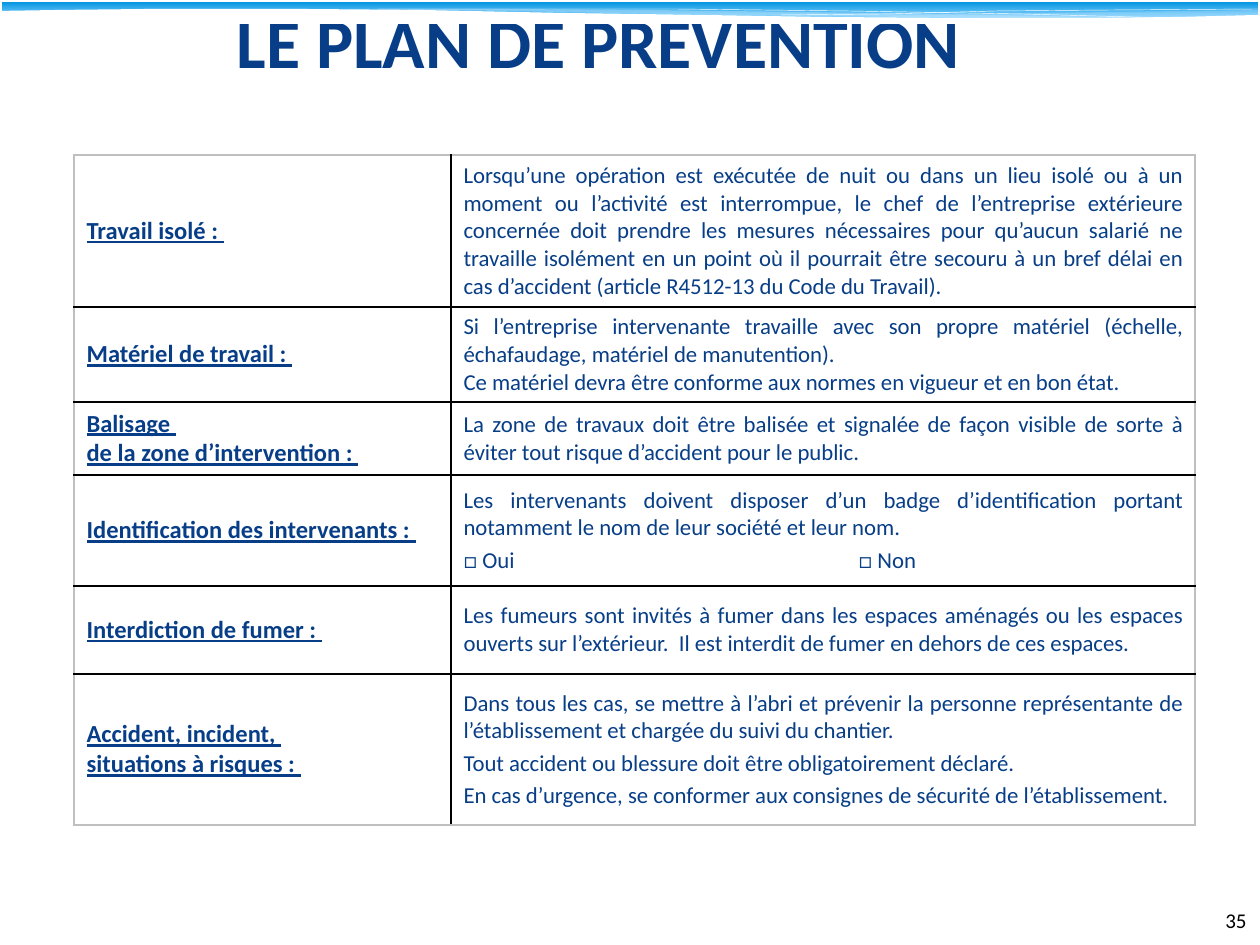
from dataclasses import dataclass

from lxml import etree
from pptx import Presentation
from pptx import util as u
from pptx.dml import color
from pptx.enum import shapes, text
from pptx.oxml import ns

PX = 914400 / 126


@dataclass(frozen=True)
class Theme:
    font: str = "Calibri"
    navy: str = "073E87"
    black: str = "000000"
    white: str = "FFFFFF"
    frame: str = "BFBFBF"
    band_top: str = "0293E0"
    band_bottom: str = "83D3FE"
    mist: str = "C6E7FC"
    title: int = 40
    label: int = 14
    body: int = 13
    number: int = 12
    gap: float = 2.6


def px(value):
    return u.Emu(round(value * PX))


def rgb(value):
    return color.RGBColor.from_string(value)


def child(parent, tag, **attributes):
    return etree.SubElement(parent, ns.qn(tag), attributes)


class SlideBuilder:
    def __init__(self, presentation, theme):
        self.theme = theme
        self.slide = presentation.slides.add_slide(presentation.slide_layouts[5])

    def set_text(self, paragraph, words, size, ink, align, bold=False, underline=False):
        paragraph.text = words
        paragraph.alignment = align
        font = paragraph.font
        font.name, font.size, font.bold = self.theme.font, u.Pt(size), bold
        font.underline = underline
        font.color.rgb = rgb(ink)

    def title(self, words, left, top, width, height):
        shape = self.slide.shapes.title
        shape.left, shape.top, shape.width, shape.height = map(px, (left, top, width, height))
        shape.text_frame.vertical_anchor = text.MSO_ANCHOR.MIDDLE
        shape.text_frame.auto_size = text.MSO_AUTO_SIZE.NONE
        self.set_text(shape.text_frame.paragraphs[0], words, self.theme.title,
                      self.theme.navy, text.PP_ALIGN.CENTER, bold=True)

    def page_number(self, words, left, top, width, height):
        shape = self.slide.shapes.add_textbox(*map(px, (left, top, width, height)))
        shape.text_frame.word_wrap = True
        shape.text_frame.vertical_anchor = text.MSO_ANCHOR.MIDDLE
        self.set_text(shape.text_frame.paragraphs[0], words, self.theme.number,
                      self.theme.black, text.PP_ALIGN.RIGHT)

    def band(self, left, top, width, height):
        shape = self.slide.shapes.add_shape(
            shapes.MSO_SHAPE.ROUNDED_RECTANGLE, *map(px, (left, top, width, height)))
        shape.adjustments[0] = 0.07
        shape.shadow.inherit = False
        shape.line.fill.background()
        shape.fill.gradient()
        shape.fill.gradient_angle = 270
        stops = shape.fill.gradient_stops
        for stop, place, ink in zip(stops, (0, 0.9), (self.theme.band_top, self.theme.band_bottom)):
            stop.position = place
            stop.color.rgb = rgb(ink)

    def wave(self, points, fill=None, opacity=100):
        builder = self.slide.shapes.build_freeform(*points[0], scale=PX)
        builder.add_line_segments(points[1:], close=fill is not None)
        shape = builder.convert_to_shape()
        shape.shadow.inherit = False
        if fill is None:
            shape.fill.background()
            shape.line.color.rgb = rgb(self.theme.white)
            shape.line.width = u.Pt(0.25)
            return
        shape.line.fill.background()
        shape.fill.solid()
        shape.fill.fore_color.rgb = rgb(fill)
        if opacity < 100:
            tint = shape.element.spPr.find(".//" + ns.qn("a:srgbClr"))
            child(tint, "a:alpha", val=str(opacity * 1000))

    def borders(self, cell, edges):
        properties = cell._tc.get_or_add_tcPr()
        for position, (side, ink) in enumerate(edges.items()):
            line = etree.Element(ns.qn("a:" + side), w=str(u.Pt(1)))
            child(child(line, "a:solidFill"), "a:srgbClr", val=ink)
            properties.insert(position, line)

    def fill_cell(self, cell, paragraphs, is_label, gap, tab):
        theme = self.theme
        cell.fill.background()
        cell.vertical_anchor = text.MSO_ANCHOR.MIDDLE
        frame = cell.text_frame
        for index, words in enumerate(paragraphs):
            paragraph = frame.add_paragraph() if index else frame.paragraphs[0]
            if index:
                paragraph.space_before = u.Pt(gap)
            has_tab = "\t" in words
            if has_tab:
                tabs = child(paragraph._p.get_or_add_pPr(), "a:tabLst")
                child(tabs, "a:tab", pos=str(px(tab)), algn="l")
            left = is_label or has_tab
            self.set_text(paragraph, words, theme.label if is_label else theme.body, theme.navy,
                          text.PP_ALIGN.LEFT if left else text.PP_ALIGN.JUSTIFY,
                          bold=is_label, underline=is_label)

    def table(self, rows, left, top, widths, heights, tab):
        table = self.slide.shapes.add_table(
            len(rows), len(widths), px(left), px(top), px(sum(widths)), px(sum(heights))).table
        table.first_row = table.horz_banding = False
        for column, width in zip(table.columns, widths):
            column.width = px(width)
        last_row, last_column = len(rows) - 1, len(widths) - 1
        frame, inner = self.theme.frame, self.theme.black
        for i, (label, gap, paragraphs) in enumerate(rows):
            table.rows[i].height = px(heights[i])
            for j, content in enumerate(([label], paragraphs)):
                cell = table.cell(i, j)
                self.fill_cell(cell, content, j == 0, gap, tab)
                self.borders(cell, {
                    "lnL": frame if j == 0 else inner,
                    "lnR": frame if j == last_column else inner,
                    "lnT": frame if i == 0 else inner,
                    "lnB": frame if i == last_row else inner,
                })


THEME = Theme()
ROWS = [
    ("Travail isolé : ", 0, [
        "Lorsqu’une opération est exécutée de nuit ou dans un lieu isolé ou à un moment ou "
        "l’activité est interrompue, le chef de l’entreprise extérieure concernée doit prendre "
        "les mesures nécessaires pour qu’aucun salarié ne travaille isolément en un point où il "
        "pourrait être secouru à un bref délai en cas d’accident (article R4512-13 du Code du "
        "Travail)."]),
    ("Matériel de travail : ", 0, [
        "Si l’entreprise intervenante travaille avec son propre matériel (échelle, échafaudage, "
        "matériel de manutention).",
        "Ce matériel devra être conforme aux normes en vigueur et en bon état."]),
    ("Balisage \vde la zone d’intervention : ", 0, [
        "La zone de travaux doit être balisée et signalée de façon visible de sorte à éviter "
        "tout risque d’accident pour le public."]),
    ("Identification des intervenants : ", THEME.gap, [
        "Les intervenants doivent disposer d’un badge d’identification portant notamment le nom "
        "de leur société et leur nom.",
        "□ Oui\t□ Non"]),
    ("Interdiction de fumer : ", 0, [
        "Les fumeurs sont invités à fumer dans les espaces aménagés ou les espaces ouverts sur "
        "l’extérieur.  Il est interdit de fumer en dehors de ces espaces."]),
    ("Accident, incident, \vsituations à risques : ", THEME.gap, [
        "Dans tous les cas, se mettre à l’abri et prévenir la personne représentante de "
        "l’établissement et chargée du suivi du chantier.",
        "Tout accident ou blessure doit être obligatoirement déclaré.",
        "En cas d’urgence, se conformer aux consignes de sécurité de l’établissement."]),
]


def main():
    presentation = Presentation()
    presentation.slide_width, presentation.slide_height = px(1260), px(945)
    builder = SlideBuilder(presentation, THEME)
    builder.band(2, 2, 1256, 17)
    builder.wave([(1260, 10), (1108, 12), (844, 16), (960, 18), (1134, 18), (1260, 15)],
                 THEME.mist, 29)
    builder.wave([(1150, 18), (994, 15), (801, 12), (649, 10), (506, 9), (348, 9), (504, 11),
                  (718, 15), (906, 17), (1036, 18)], THEME.mist, 40)
    builder.wave([(378, 9), (674, 9), (848, 11), (1021, 14), (1169, 18)])
    builder.wave([(781, 15), (888, 14), (997, 11), (1115, 10), (1259, 9)])
    builder.wave([(0, 11), (60, 10), (150, 9), (300, 9), (420, 10), (560, 13), (700, 15),
                  (820, 17), (950, 18), (1100, 18), (1180, 17), (1260, 15), (1260, 24), (0, 24)],
                 THEME.white)
    builder.title("LE PLAN DE PRÉVENTION", 0, 16, 1197, 49)
    builder.page_number("35", 965, 895, 294, 50)
    builder.table(ROWS, 74, 155, (377, 744), (152, 95, 73, 111, 88, 151), tab=395)
    presentation.save("out.pptx")


if __name__ == "__main__":
    main()
